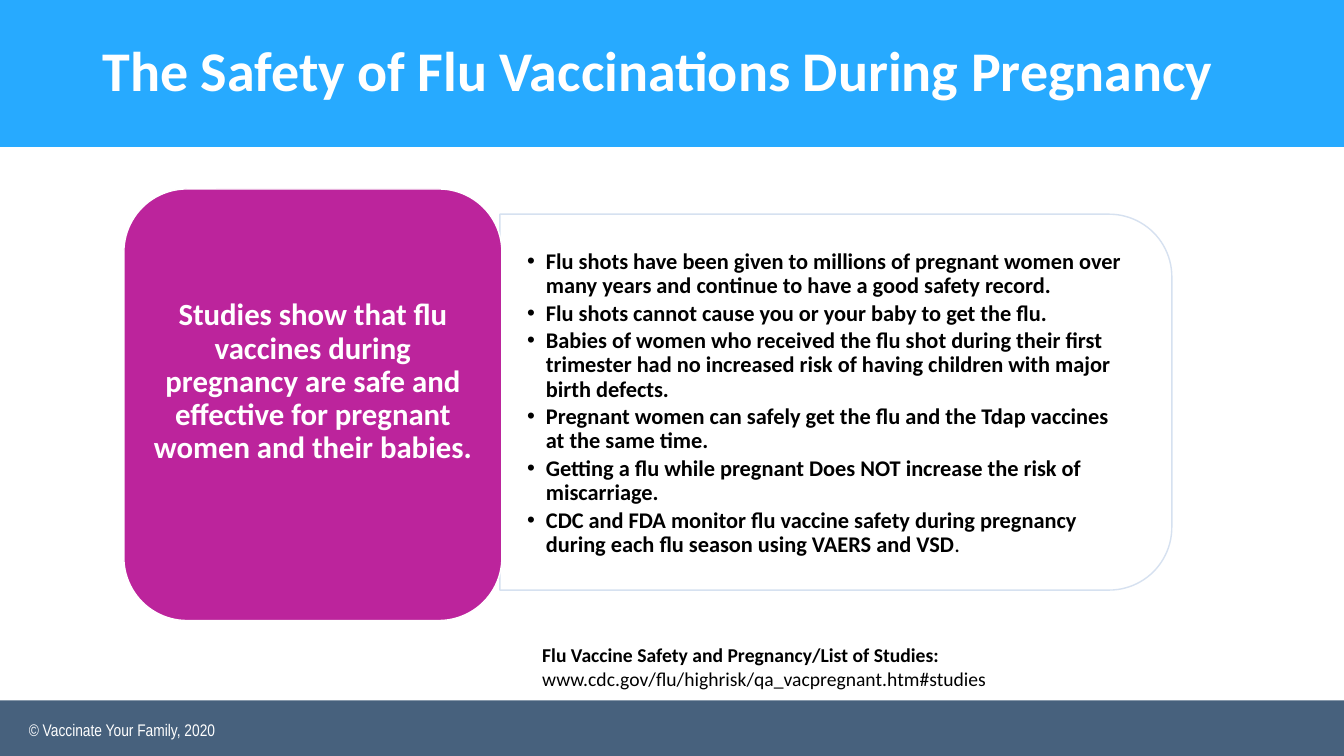
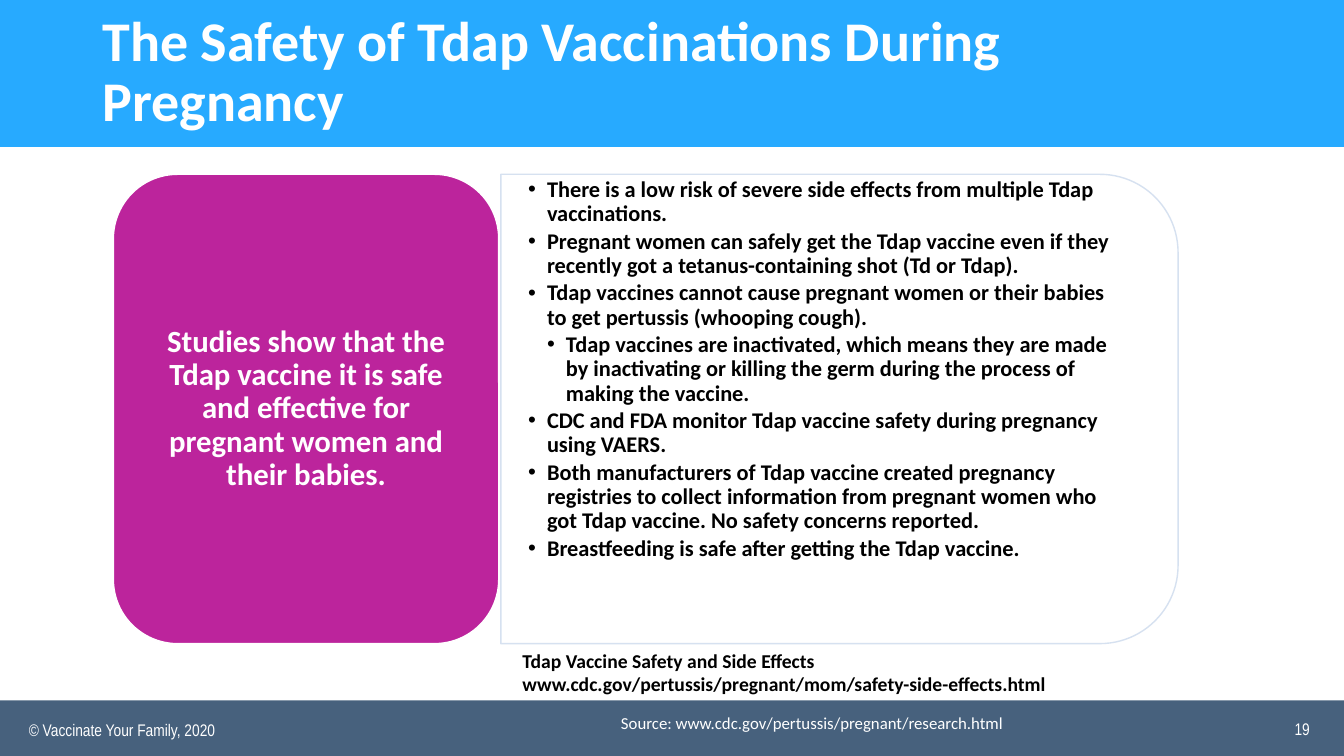
from lxml.etree import SubElement
from pptx import Presentation
from pptx.dml.color import RGBColor
from pptx.enum.shapes import MSO_SHAPE as SHAPE
from pptx.enum.text import MSO_ANCHOR as ANCHOR, MSO_AUTO_SIZE as FIT, PP_ALIGN as ALIGN
from pptx.oxml.ns import qn
from pptx.util import Pt

PX = 9525  # 96 px to the inch
WHITE, BLACK = "FFFFFF", "000000"
SKY, SLATE, MAGENTA, PALE = "27AAFF", "47617D", "BC249C", "D2DEEF"
BULLET_INDENT = 18


def rgb(value):
    return RGBColor.from_string(value)


def write(shape, paragraphs, size, color, font="Calibri", align=ALIGN.LEFT,
          anchor=ANCHOR.TOP, line=1.0, after=0):
    """Each paragraph is a pair: bold text, then regular text."""
    frame = shape.text_frame
    frame.word_wrap = True
    frame.auto_size = FIT.NONE
    frame.vertical_anchor = anchor
    for i, pair in enumerate(paragraphs):
        paragraph = frame.paragraphs[0] if i == 0 else frame.add_paragraph()
        paragraph.alignment = align
        paragraph.line_spacing = line
        paragraph.space_before = Pt(0)
        paragraph.space_after = Pt(after)
        for text, bold in zip(pair, (True, False)):
            if text:
                run = paragraph.add_run()
                run.text = text
                run.font.name = font
                run.font.size = Pt(size)
                run.font.bold = bold
                run.font.color.rgb = rgb(color)


# Content: boxes are left, top, width, height; facts are level, bold, regular
topics = [
    {
        "title": "The Safety of Flu Vaccinations During Pregnancy",
        "claim": "Studies show that flu vaccines during pregnancy are safe and "
                 "effective for pregnant women and their babies.",
        "claim_box": (118, 180, 360, 411),
        "claim_lift": 42,
        "card_box": (476, 204, 640, 358),
        "facts_box": (476, 223, 623, 323),
        "facts": [
            (1, "Flu shots have been given to millions of pregnant women over many "
                "years and continue to have a good safety record.", ""),
            (1, "Flu shots cannot cause you or your baby to get the flu.", ""),
            (1, "Babies of women who received the flu shot during their first trimester "
                "had no increased risk of having children with major birth defects.", ""),
            (1, "Pregnant women can safely get the flu and the Tdap vaccines at the "
                "same time.", ""),
            (1, "Getting a flu while pregnant Does NOT increase the risk of "
                "miscarriage.", ""),
            (1, "CDC and FDA monitor flu vaccine safety during pregnancy during each "
                "flu season using VAERS and VSD", "."),
        ],
        "reference_box": (507, 608, 664, 55),
        "reference": [("Flu Vaccine Safety and Pregnancy/List of Studies: ",
                       "www.cdc.gov/flu/highrisk/qa_vacpregnant.htm#studies")],
    },
    {
        "title": "The Safety of Tdap Vaccinations During Pregnancy",
        "claim": "Studies show that the Tdap vaccine it is safe and effective for "
                 "pregnant women and their babies.",
        "claim_box": (108, 166, 367, 447),
        "claim_lift": 0,
        "card_box": (477, 166, 645, 447),
        "facts_box": (477, 150, 623, 404),
        "facts": [
            (1, "There is a low risk of severe side effects from multiple Tdap "
                "vaccinations.", ""),
            (1, "Pregnant women can safely get the Tdap vaccine even if they recently "
                "got a tetanus-containing shot (Td or Tdap).", ""),
            (1, "Tdap vaccines cannot cause pregnant women or their babies to get "
                "pertussis (whooping cough).", ""),
            (2, "Tdap vaccines are inactivated, which means they are made by "
                "inactivating or killing the germ during the process of making the "
                "vaccine.", ""),
            (1, "CDC and FDA monitor Tdap vaccine safety during pregnancy using "
                "VAERS.", ""),
            (1, "Both manufacturers of Tdap vaccine created pregnancy registries to "
                "collect information from pregnant women who got Tdap vaccine. No "
                "safety concerns reported.", ""),
            (1, "Breastfeeding is safe after getting the Tdap vaccine.", ""),
        ],
        "reference_box": (488, 613, 553, 55),
        "reference": [
            ("Tdap Vaccine Safety and Side Effects", ""),
            ("www.cdc.gov/pertussis/pregnant/mom/safety-side-effects.html", ""),
        ],
        "source": "Source: www.cdc.gov/pertussis/pregnant/research.html",
        "number": "19",
    },
]

deck = Presentation()
deck.slide_width, deck.slide_height = 1280 * PX, 720 * PX
layout = deck.slide_layouts[5]

# Layout: keep only the title placeholder, in the top band
title_holder, *unused = layout.placeholders
for holder in unused:
    holder.element.getparent().remove(holder.element)
title_holder.left, title_holder.top = 88 * PX, 18 * PX
title_holder.width, title_holder.height = 1104 * PX, 104 * PX

slides = [deck.slides.add_slide(layout) for _ in topics]

# Shared bands and copyright line, moved behind the title on the layout
bands = []
for top, height, color in ((667, 53, SLATE), (0, 140, SKY)):
    band = slides[0].shapes.add_shape(SHAPE.RECTANGLE, 0, top * PX, 1280 * PX, height * PX)
    band.shadow.inherit = False
    band.fill.solid()
    band.fill.fore_color.rgb = rgb(color)
    band.line.fill.background()
    bands.append(band)
copyright_line = slides[0].shapes.add_textbox(18 * PX, 681 * PX, 397 * PX, 29 * PX)
write(copyright_line, [("", "© Vaccinate Your Family, 2020")], 12, WHITE, "Arial Narrow")
for position, part in enumerate([*bands, copyright_line], start=2):
    layout.shapes.element.insert(position, part.element)

for slide, topic in zip(slides, topics):
    shapes = slide.shapes
    write(shapes.title, [(topic["title"], "")], 40, WHITE, anchor=ANCHOR.MIDDLE, line=0.9)

    # Outlined card: a quarter turn puts the rounded corners on the right
    left, top, width, height = topic["card_box"]
    shift = (width - height) // 2
    card = shapes.add_shape(SHAPE.ROUND_2_SAME_RECTANGLE, (left + shift) * PX,
                            (top - shift) * PX, height * PX, width * PX)
    card.rotation = 90
    card.shadow.inherit = False
    card.fill.background()
    card.line.width = Pt(1)
    card.line.color.rgb = rgb(PALE)
    tint = card.element.find(".//" + qn("a:ln")).find(".//" + qn("a:srgbClr"))
    SubElement(tint, qn("a:alpha"), val="90000")

    # Bulleted facts
    facts = shapes.add_textbox(*(n * PX for n in topic["facts_box"]))
    write(facts, [fact[1:] for fact in topic["facts"]], 16, BLACK,
          anchor=ANCHOR.MIDDLE, line=0.9, after=2.4)
    frame = facts.text_frame
    frame.margin_left = frame.margin_right = 26 * PX
    frame.margin_top = frame.margin_bottom = 13 * PX
    for paragraph, (level, *_) in zip(frame.paragraphs, topic["facts"]):
        properties = paragraph._p.get_or_add_pPr()
        properties.set("marL", str(level * BULLET_INDENT * PX))
        properties.set("indent", str(-BULLET_INDENT * PX))
        SubElement(properties, qn("a:buFont"), typeface="Arial")
        SubElement(properties, qn("a:buChar"), char="•")

    # Main claim
    claim = shapes.add_shape(SHAPE.ROUNDED_RECTANGLE, *(n * PX for n in topic["claim_box"]))
    claim.shadow.inherit = False
    claim.fill.solid()
    claim.fill.fore_color.rgb = rgb(MAGENTA)
    claim.line.width = Pt(1)
    claim.line.color.rgb = rgb(WHITE)
    write(claim, [(topic["claim"], "")], 22, WHITE, align=ALIGN.CENTER,
          anchor=ANCHOR.MIDDLE, line=0.9)
    claim.text_frame.margin_bottom = (5 + topic["claim_lift"]) * PX

    # Reference, source and slide number
    reference = shapes.add_textbox(*(n * PX for n in topic["reference_box"]))
    write(reference, topic["reference"], 14, BLACK)
    if "source" in topic:
        source = shapes.add_textbox(582 * PX, 674 * PX, 459 * PX, 29 * PX)
        write(source, [("", topic["source"])], 12, WHITE)
    if "number" in topic:
        number = shapes.add_textbox(969 * PX, 675 * PX, 288 * PX, 38 * PX)
        write(number, [("", topic["number"])], 12, WHITE, "Arial Narrow",
              align=ALIGN.RIGHT, anchor=ANCHOR.MIDDLE)

deck.save("out.pptx")
